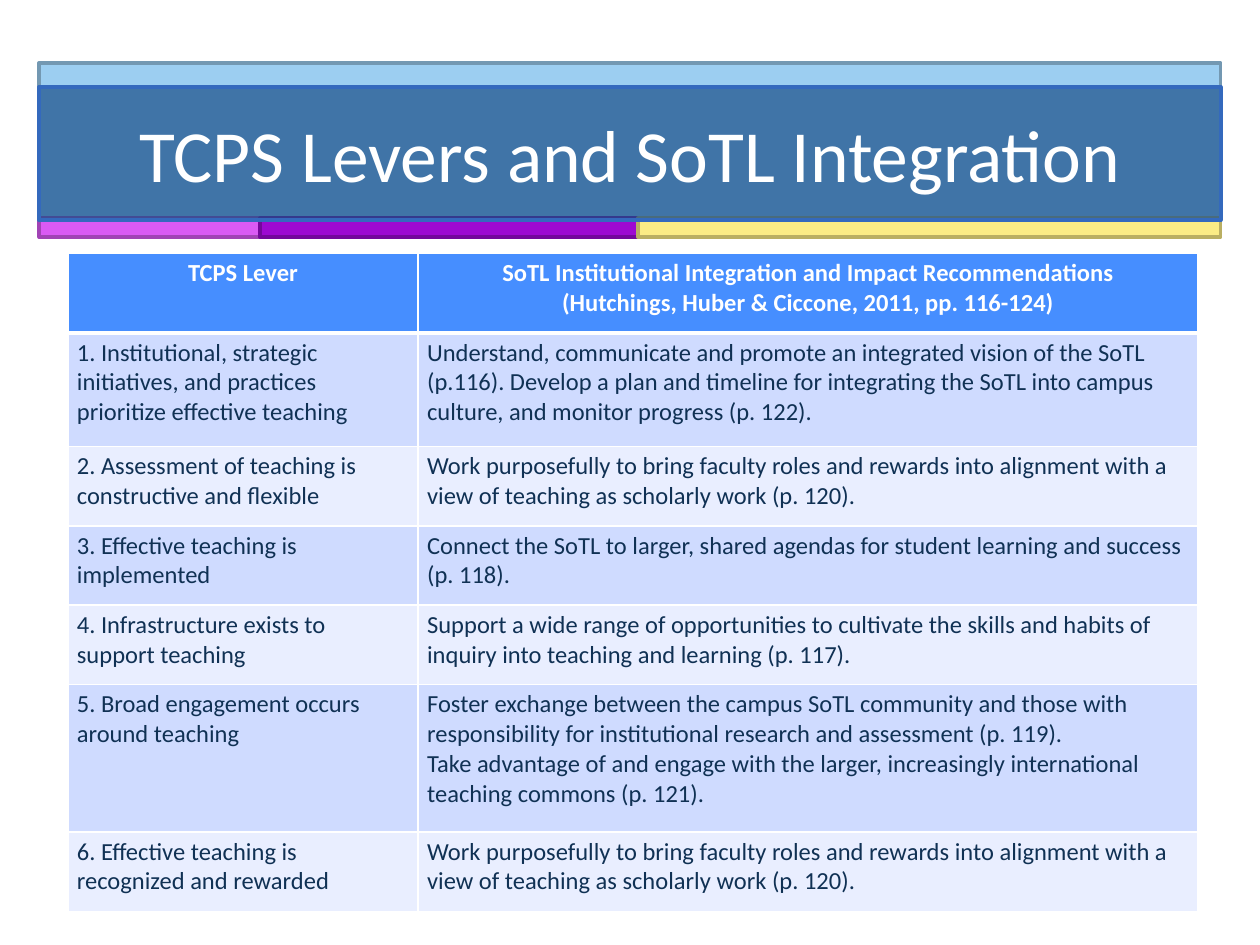
from lxml.etree import SubElement
from pptx import Presentation
from pptx.dml.color import RGBColor
from pptx.enum.shapes import MSO_SHAPE as Shape
from pptx.enum.text import MSO_ANCHOR as Anchor, MSO_AUTO_SIZE as AutoSize, PP_ALIGN as Align
from pptx.oxml.ns import qn
from pptx.util import Cm, Pt

FONT = "Calibri"
HEADER = ["TCPS Lever",
          "SoTL Institutional Integration and Impact Recommendations\n"
          "(Hutchings, Huber & Ciccone, 2011, pp. 116-124)"]
ALIGNMENT = ("Work purposefully to bring faculty roles and rewards into alignment "
             "with a view of teaching as scholarly work (p. 120).")
LEVERS = [
    ("1. Institutional, strategic initiatives, and practices prioritize effective teaching",
     "Understand, communicate and promote an integrated vision of the SoTL (p.116). "
     "Develop a plan and timeline for integrating the SoTL into campus culture, "
     "and monitor progress (p. 122)."),
    ("2. Assessment of teaching is constructive and flexible", ALIGNMENT),
    ("3. Effective teaching is implemented",
     "Connect the SoTL to larger, shared agendas for student learning and success (p. 118)."),
    ("4. Infrastructure exists to support teaching",
     "Support a wide range of opportunities to cultivate the skills and habits of "
     "inquiry into teaching and learning (p. 117)."),
    ("5. Broad engagement occurs around teaching",
     "Foster exchange between the campus SoTL community and those with responsibility "
     "for institutional research and assessment (p. 119).\n"
     "Take advantage of and engage with the larger, increasingly international "
     "teaching commons (p. 121)."),
    ("6. Effective teaching is recognized and rewarded", ALIGNMENT),
]
COL_WIDTHS = [7.06, 15.72]
ROW_HEIGHTS = [1.6, 2.29, 1.6, 1.6, 1.6, 2.97, 1.6]
STRIPS = [(4.45, "DA5AF4", "A143B5"), (7.62, "9D09D1", "74079B"), (11.75, "FBEC85", "BAAF62")]


def rgb(value):
    """Turn a hex string into a colour."""
    return RGBColor.from_string(value)


def paint(sp, fill, line):
    """Give a shape a solid fill and a 2 pt outline without shadow."""
    sp.shadow.inherit = False
    sp.fill.solid()
    sp.fill.fore_color.rgb = rgb(fill)
    sp.line.color.rgb = rgb(line)
    sp.line.width = Pt(2)


def write(tf, text, size, color, align, bold=False):
    """Write one paragraph for each line of text."""
    for i, line in enumerate(text.split("\n")):
        p = tf.add_paragraph() if i else tf.paragraphs[0]
        p.alignment = align
        r = p.add_run()
        r.text = line
        r.font.name, r.font.size, r.font.bold = FONT, Pt(size), bold
        r.font.color.rgb = rgb(color)


def add_bar(slide, left, top, width, height, fill, line):
    """Add one coloured rectangle, measured in centimetres."""
    sp = slide.shapes.add_shape(Shape.RECTANGLE, Cm(left), Cm(top), Cm(width), Cm(height))
    paint(sp, fill, line)


def add_banner(slide, left, top, width):
    """Add the title band over its light bar and the row of strips below."""
    add_bar(slide, left, top, width, 3.15, "9CCEF1", "7398B2")
    x = left
    for strip, fill, line in STRIPS:
        add_bar(slide, x, top + 3.13, strip, 0.38, fill, line)
        x += strip

    sp = slide.shapes.title
    sp.left, sp.top, sp.width, sp.height = Cm(left), Cm(top + 0.48), Cm(width), Cm(2.69)
    paint(sp, "1A4F88", "3469BD")
    clr = sp.element.spPr.find(qn("a:solidFill")).find(qn("a:srgbClr"))
    SubElement(clr, qn("a:alpha"), val="70000")
    tf = sp.text_frame
    tf.word_wrap, tf.auto_size, tf.vertical_anchor = True, AutoSize.NONE, Anchor.MIDDLE
    write(tf, "TCPS Levers and SoTL Integration", 42, "FFFFFF", Align.CENTER)
    sp.element.getparent().append(sp.element)


def add_borders(cell, top, bottom):
    """Draw white cell borders, with top and bottom widths in points."""
    tc_pr = cell._tc.get_or_add_tcPr()
    for side, width in (("L", 1), ("R", 1), ("T", top), ("B", bottom)):
        ln = SubElement(tc_pr, qn(f"a:ln{side}"), w=str(Pt(width)))
        SubElement(SubElement(ln, qn("a:solidFill")), qn("a:srgbClr"), val="FFFFFF")


def add_lever_table(slide, left, top):
    """Add the table of levers and recommendations at the given corner."""
    rows = [HEADER, *LEVERS]
    table = slide.shapes.add_table(len(rows), len(COL_WIDTHS), Cm(left), Cm(top),
                                   Cm(sum(COL_WIDTHS)), Cm(sum(ROW_HEIGHTS))).table
    for col, width in zip(table.columns, COL_WIDTHS):
        col.width = Cm(width)
    for i, (texts, height) in enumerate(zip(rows, ROW_HEIGHTS)):
        table.rows[i].height = Cm(height)
        head = i == 0
        fill = "468EFF" if head else ("CFDBFF" if i % 2 else "E9EEFF")
        for j, text in enumerate(texts):
            cell = table.cell(i, j)
            cell.margin_left = cell.margin_right = Cm(0.18)
            cell.margin_top = cell.margin_bottom = Cm(0.1)
            add_borders(cell, 3 if i == 1 else 1, 3 if head else 1)
            cell.fill.solid()
            cell.fill.fore_color.rgb = rgb(fill)
            write(cell.text_frame, text, 14, "FFFFFF" if head else "103154",
                  Align.CENTER if head else Align.LEFT, head)


def main():
    """Build the slide and save it."""
    prs = Presentation()
    prs.slide_width, prs.slide_height = Cm(25.4), Cm(19.05)
    slide = prs.slides.add_slide(prs.slide_layouts[5])
    add_lever_table(slide, 1.37, 5.11)
    add_banner(slide, 0.79, 1.27, 23.82)
    prs.save("out.pptx")


if __name__ == "__main__":
    main()
